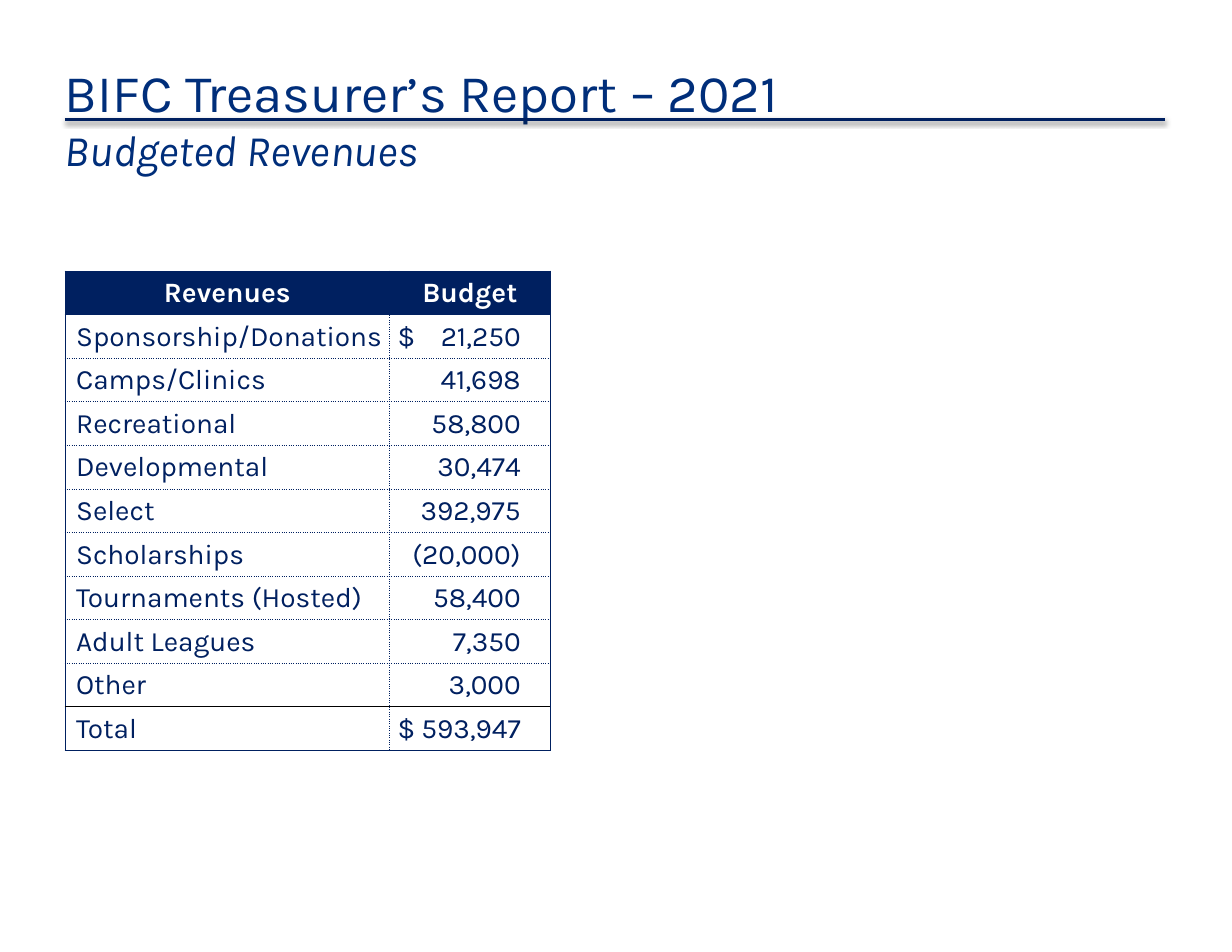
from lxml.etree import SubElement
from pptx import Presentation
from pptx.dml.color import RGBColor
from pptx.enum.shapes import MSO_CONNECTOR
from pptx.enum.text import MSO_ANCHOR, PP_ALIGN
from pptx.oxml.ns import qn
from pptx.util import Inches, Pt

# Content
TITLE = "BIFC Treasurer’s Report – 2021"
SUBTITLE = "Budgeted Revenues"
HEADER = ("Revenues", "Budget")
BUDGET = [
    ("Sponsorship/Donations", "$\t21,250"),
    ("Camps/Clinics", "\t41,698"),
    ("Recreational", "\t58,800"),
    ("Developmental", "\t30,474"),
    ("Select", "\t392,975"),
    ("Scholarships", "\t(20,000)"),
    ("Tournaments (Hosted)", "\t58,400"),
    ("Adult Leagues", "\t7,350"),
    ("Other", "\t3,000"),
    ("Total", "$\t593,947"),
]

# Style and layout, in inches
FONT = "Karla"
NAVY, BLUE, WHITE, BLACK = "002060", "002E7A", "FFFFFF", "000000"
LEFT, RIGHT, RULE_Y = 0.58, 10.4, 1.07
TABLE_TOP, ROW_HEIGHT = 2.42, 0.389
COLUMN_WIDTHS = (2.9, 1.43)
AMOUNT_TAB = 1.1


def color(hex_string):
    return RGBColor.from_string(hex_string)


def set_font(paragraph, size, hex_string, bold=False, italic=False):
    font = paragraph.font
    font.name, font.size = FONT, Pt(size)
    font.bold, font.italic = bold, italic
    font.color.rgb = color(hex_string)


def fill_heading(placeholder, text, top, height, size, italic=False):
    placeholder.left, placeholder.top = Inches(LEFT), Inches(top)
    placeholder.width, placeholder.height = Inches(RIGHT - LEFT), Inches(height)
    frame = placeholder.text_frame
    frame.margin_left = frame.margin_right = 0
    frame.margin_top = frame.margin_bottom = 0
    frame.vertical_anchor = MSO_ANCHOR.TOP
    frame.text = text
    paragraph = frame.paragraphs[0]
    paragraph.alignment = PP_ALIGN.LEFT
    paragraph.space_before = Pt(0)
    properties = paragraph._p.get_or_add_pPr()
    properties.set("marL", "0")
    properties.set("indent", "0")
    SubElement(properties, qn("a:buNone"))
    set_font(paragraph, size, BLUE, italic=italic)


def add_border(cell, side, hex_string, dash):
    line = SubElement(cell._tc.get_or_add_tcPr(), qn(f"a:ln{side}"), w=str(Pt(0.5)))
    fill = SubElement(line, qn("a:solidFill"))
    SubElement(fill, qn("a:srgbClr"), val=hex_string)
    SubElement(line, qn("a:prstDash"), val=dash)


def add_amount_tab(paragraph):
    tabs = SubElement(paragraph._p.get_or_add_pPr(), qn("a:tabLst"))
    SubElement(tabs, qn("a:tab"), pos=str(Inches(AMOUNT_TAB)), algn="r")


prs = Presentation()
prs.slide_width, prs.slide_height = Inches(11), Inches(8.5)
slide = prs.slides.add_slide(prs.slide_layouts[1])

# Heading
title, subtitle = slide.placeholders
fill_heading(title, TITLE, 0.53, 0.54, 34)
fill_heading(subtitle, SUBTITLE, 1.1, 0.45, 28, italic=True)

# Rule under the title, with a soft shadow
rule = slide.shapes.add_connector(
    MSO_CONNECTOR.STRAIGHT,
    Inches(LEFT), Inches(RULE_Y), Inches(RIGHT), Inches(RULE_Y))
rule.line.color.rgb = color(NAVY)
rule.line.width = Pt(2)
effects = SubElement(rule._element.spPr, qn("a:effectLst"))
shadow = SubElement(effects, qn("a:outerShdw"), blurRad=str(Pt(3.1)),
                    dist=str(Pt(1.6)), dir="5400000", rotWithShape="0")
shadow_color = SubElement(shadow, qn("a:srgbClr"), val=BLACK)
SubElement(shadow_color, qn("a:alpha"), val="38000")

# Budget table
rows = [HEADER, *BUDGET]
last = len(rows) - 1
table = slide.shapes.add_table(
    len(rows), len(HEADER), Inches(LEFT), Inches(TABLE_TOP),
    Inches(sum(COLUMN_WIDTHS)), Inches(ROW_HEIGHT * len(rows))).table
for column, width in zip(table.columns, COLUMN_WIDTHS):
    column.width = Inches(width)

for r, row in enumerate(rows):
    table.rows[r].height = Inches(ROW_HEIGHT)
    is_header = r == 0
    for c, text in enumerate(row):
        cell = table.cell(r, c)
        cell.text = text
        cell.vertical_anchor = MSO_ANCHOR.MIDDLE
        cell.margin_left = Inches(0.01 if is_header else (0.1, 0.07)[c])
        cell.margin_top = cell.margin_right = Inches(0.01)
        cell.margin_bottom = 0
        paragraph = cell.text_frame.paragraphs[0]
        if is_header:
            paragraph.alignment = PP_ALIGN.CENTER
        elif c == 1:
            add_amount_tab(paragraph)
        set_font(paragraph, 18, WHITE if is_header else NAVY, bold=is_header)

        # Solid outside, dotted inside, black above the total
        add_border(cell, "L", NAVY, "solid" if c == 0 else "dot")
        add_border(cell, "R", NAVY, "solid" if c == 1 else "dot")
        for side, edge in (("T", r), ("B", r + 1)):
            solid = edge in (0, last, last + 1)
            add_border(cell, side, BLACK if edge == last else NAVY,
                       "solid" if solid else "dot")
        if is_header:
            cell.fill.solid()
            cell.fill.fore_color.rgb = color(NAVY)
        else:
            cell.fill.background()

prs.save("out.pptx")
